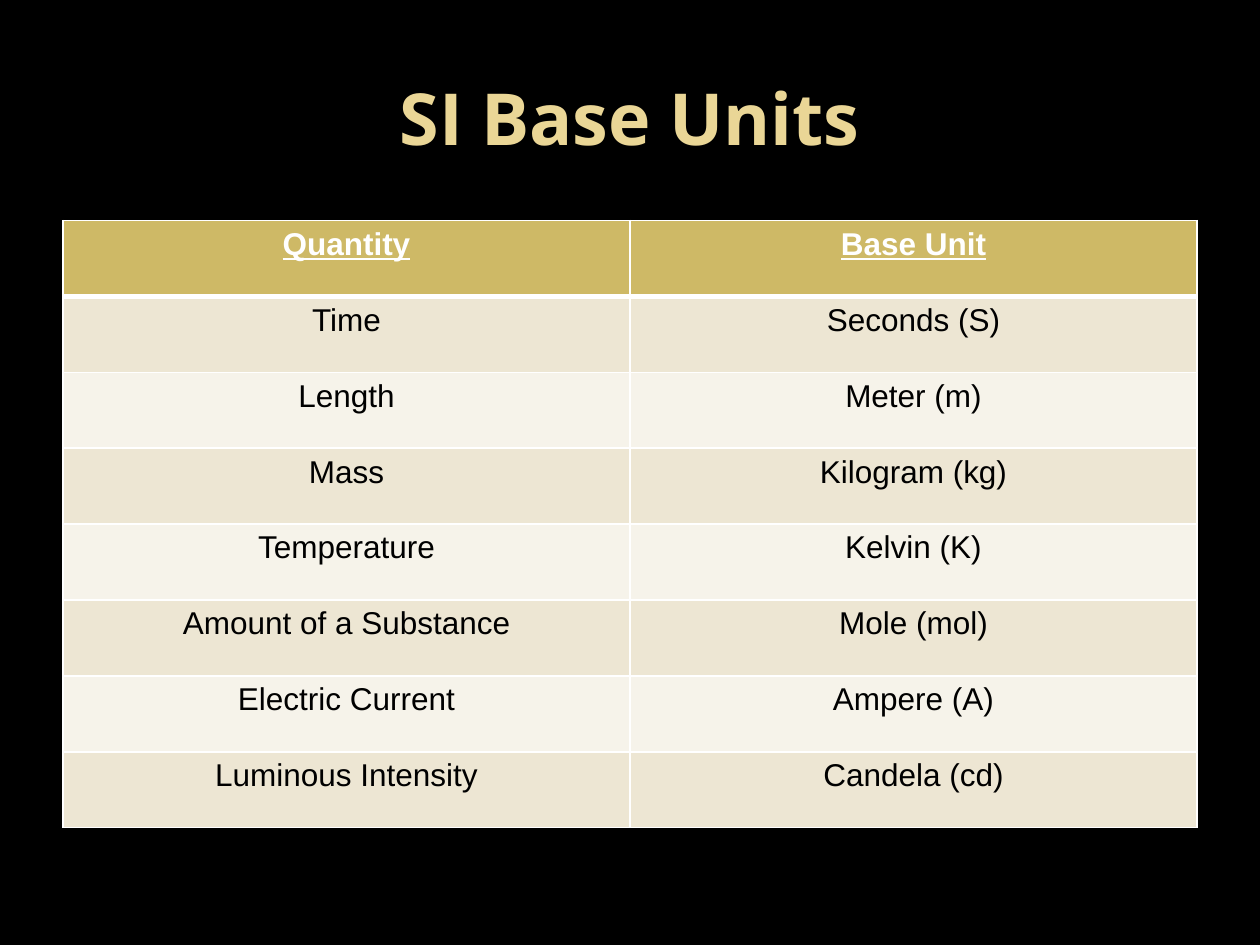
import pptx
import pptx.dml.color
import pptx.enum.text
import pptx.oxml
import pptx.oxml.ns
import pptx.util
from pptx.util import Inches


def color(value):
    return pptx.dml.color.RGBColor.from_string(value)


def add_border(cell, side, width):
    cell._tc.get_or_add_tcPr().append(pptx.oxml.parse_xml(
        f'<a:{side} {pptx.oxml.ns.nsdecls("a")} w="{pptx.util.Pt(width)}">'
        f'<a:solidFill><a:srgbClr val="FFFFFF"/></a:solidFill></a:{side}>'))


rows = [
    ("Quantity", "Base Unit"),
    ("Time", "Seconds (S)"),
    ("Length", "Meter (m)"),
    ("Mass", "Kilogram (kg)"),
    ("Temperature", "Kelvin (K)"),
    ("Amount of a Substance", "Mole (mol)"),
    ("Electric Current", "Ampere (A)"),
    ("Luminous Intensity", "Candela (cd)"),
]

presentation = pptx.Presentation()
presentation.slide_width = Inches(10)
presentation.slide_height = Inches(7.5)
slide = presentation.slides.add_slide(presentation.slide_layouts[5])
slide.background.fill.solid()
slide.background.fill.fore_color.rgb = color("000000")

title = slide.shapes.title
title.left, title.top = Inches(0.5), Inches(0.3)
title.width, title.height = Inches(9), Inches(1.25)
title.text_frame.text = "SI Base Units"
title.text_frame.vertical_anchor = pptx.enum.text.MSO_ANCHOR.MIDDLE
paragraph = title.text_frame.paragraphs[0]
paragraph.alignment = pptx.enum.text.PP_ALIGN.CENTER
font = paragraph.runs[0].font
font.name = "Open Sans"
font.size = pptx.util.Pt(41)
font.bold = True
font.color.rgb = color("EAD696")

table = slide.shapes.add_table(
    len(rows), 2, Inches(0.5), Inches(1.75), Inches(9), Inches(4.82)).table

for row_index, row in enumerate(rows):
    is_header = row_index == 0
    for column_index, text in enumerate(row):
        cell = table.cell(row_index, column_index)
        cell.margin_left = cell.margin_right = Inches(0.11)
        cell.margin_top = cell.margin_bottom = Inches(0.05)
        add_border(cell, "lnL", 1)
        add_border(cell, "lnR", 1)
        add_border(cell, "lnT", 3 if row_index == 1 else 1)
        add_border(cell, "lnB", 3 if is_header else 1)
        cell.fill.solid()
        band = "EDE6D3" if row_index % 2 else "F6F3EA"
        cell.fill.fore_color.rgb = color("CEB966" if is_header else band)

        cell.text_frame.text = text
        paragraph = cell.text_frame.paragraphs[0]
        paragraph.alignment = pptx.enum.text.PP_ALIGN.CENTER
        font = paragraph.runs[0].font
        font.name = "Arial"
        font.size = pptx.util.Pt(18)
        font.bold = is_header
        font.underline = is_header
        font.color.rgb = color("FFFFFF" if is_header else "000000")

presentation.save("out.pptx")
